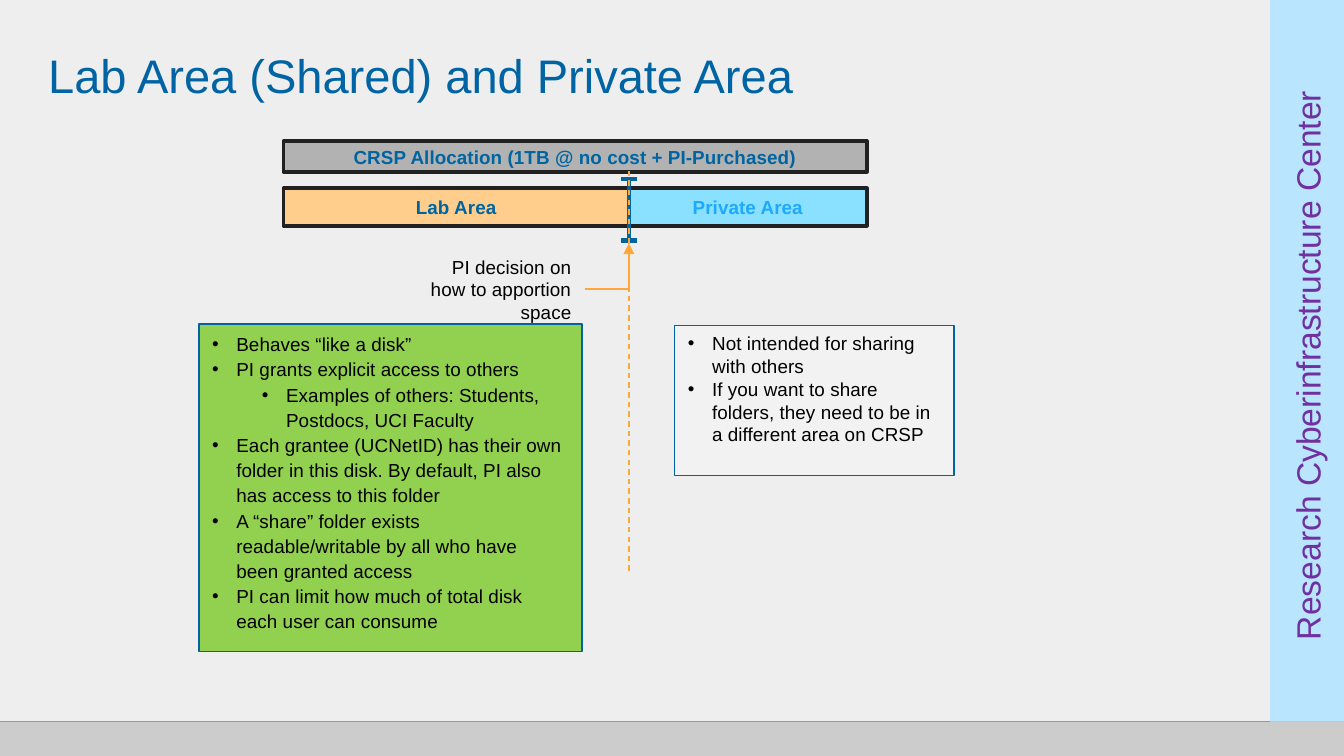
from lxml import etree
from pptx import Presentation
from pptx.dml.color import RGBColor
from pptx.enum.dml import MSO_LINE
from pptx.enum.shapes import MSO_CONNECTOR, MSO_SHAPE
from pptx.enum.text import MSO_ANCHOR, PP_ALIGN
from pptx.oxml.ns import qn
from pptx.util import Inches, Pt

RECT = MSO_SHAPE.RECTANGLE
STRAIGHT, ELBOW = MSO_CONNECTOR.STRAIGHT, MSO_CONNECTOR.ELBOW
LEFT, CENTER, RIGHT = PP_ALIGN.LEFT, PP_ALIGN.CENTER, PP_ALIGN.RIGHT
TOP, MIDDLE = MSO_ANCHOR.TOP, MSO_ANCHOR.MIDDLE
DASH = MSO_LINE.DASH

WIDTH = 10
HEIGHT = WIDTH * 9 / 16
NAVY, AMBER, INK, BLACK = "0064A1", "FEA83A", "212121", "000000"
BODY_SIZE = 10.13

LAB_POINTS = [
    (0, "Behaves “like a disk”"),
    (0, "PI grants explicit access to others"),
    (1, "Examples of others: Students, Postdocs, UCI Faculty"),
    (0, "Each grantee (UCNetID) has their own folder in this disk. "
        "By default, PI also has access to this folder"),
    (0, "A “share” folder exists readable/writable by all who have been granted access"),
    (0, "PI can limit how much of total disk each user can consume"),
]
PRIVATE_POINTS = [
    (0, "Not intended for sharing with others"),
    (0, "If you want to share folders, they need to be in a different area on CRSP"),
]


def color(value):
    return RGBColor.from_string(value)


def set_font(paragraph, **formats):
    values = {"name": "Arial", "size": Pt(formats.pop("size", BODY_SIZE)), **formats}
    paragraph.font.color.rgb = color(values.pop("hue", BLACK))
    for key, value in values.items():
        setattr(paragraph.font, key, value)


def add_panel(slide, box, fill, line=None, width=0.75):
    panel = slide.shapes.add_shape(RECT, *map(Inches, box))
    panel.shadow.inherit = False
    panel.fill.solid()
    panel.fill.fore_color.rgb = color(fill)
    if line:
        panel.line.color.rgb = color(line)
        panel.line.width = Pt(width)
    else:
        panel.line.fill.background()
    return panel


def write(shape, text, align=CENTER, anchor=MIDDLE, **formats):
    frame = shape.text_frame
    frame.word_wrap = True
    frame.vertical_anchor = anchor
    paragraph = frame.paragraphs[0]
    paragraph.alignment = align
    set_font(paragraph, **formats)
    paragraph.add_run().text = text


def add_label(slide, box, text, **formats):
    write(slide.shapes.add_textbox(*map(Inches, box)), text, **formats)


def add_line(slide, start, end, hue, width=0.75, kind=STRAIGHT):
    line = slide.shapes.add_connector(kind, *map(Inches, (*start, *end)))
    line.line.color.rgb = color(hue)
    line.line.width = Pt(width)
    etree.SubElement(line._element.spPr, qn("a:effectLst"))
    return line


def add_frame(slide):
    """Footer strip and the vertical banner on the right edge."""
    footer_top, banner_left = 5.37, 9.45
    add_panel(slide, (0, footer_top, WIDTH, HEIGHT - footer_top), "CCCCCC")
    add_line(slide, (0, footer_top), (WIDTH, footer_top), "999999")
    banner = add_panel(slide, (banner_left, 0, WIDTH - banner_left, footer_top), "B9E5FF")
    write(banner, "Research Cyberinfrastructure Center ", size=18, hue="7030A0")
    banner.text_frame._txBody.bodyPr.set("vert", "vert270")


def add_allocation(slide, left, top, width, split):
    """Total bar above the lab and private bars, which meet at x = split."""
    lower, right = top + 0.35, left + width
    bars = [
        ((left, top, width, 0.23), "B2B2B2", NAVY,
         "CRSP Allocation (1TB @ no cost + PI-Purchased)"),
        ((left, lower, split - left, 0.28), "FFCD8C", NAVY, "Lab Area"),
        ((split, lower, right - split, 0.28), "89E1FF", "1CA9FF", "Private Area"),
    ]
    for box, fill, hue, text in bars:
        write(add_panel(slide, box, fill, INK, 2), text, hue=hue, bold=True)


def add_divider(slide, x, top, bottom):
    """Slider mark shaped like a capital I."""
    add_line(slide, (x, top), (x, bottom), NAVY, 2.25)
    for y in (bottom, top):
        add_line(slide, (x - 0.06, y), (x + 0.06, y), NAVY, 2.25)


def add_decision(slide, left, top, split):
    width = 1.32
    add_label(slide, (left, top, width, 0.61), "PI decision on how to apportion space",
              align=RIGHT, anchor=TOP)
    arrow = add_line(slide, (left + width, top + 0.3), (split, top - 0.04), AMBER, kind=ELBOW)
    arrow._element.spPr.find(qn("a:prstGeom")).set("prst", "bentConnector2")
    etree.SubElement(arrow.line._get_or_add_ln(), qn("a:tailEnd"), type="triangle")


def add_points(slide, box, fill, points, spacing=None, margin_right=0.1):
    panel = add_panel(slide, box, fill, NAVY)
    frame = panel.text_frame
    frame.word_wrap = True
    frame.vertical_anchor = TOP
    frame.margin_right = Inches(margin_right)
    for index, (level, text) in enumerate(points):
        paragraph = frame.paragraphs[0] if index == 0 else frame.add_paragraph()
        paragraph.alignment = LEFT
        paragraph.level = level
        if spacing:
            paragraph.line_spacing = Pt(spacing)
        props = paragraph._p.get_or_add_pPr()
        props.set("marL", str(Inches(0.18 + 0.37 * level)))
        props.set("indent", str(Inches(-0.18)))
        bullet_color = etree.SubElement(props, qn("a:buClr"))
        etree.SubElement(bullet_color, qn("a:srgbClr"), val=BLACK)
        etree.SubElement(props, qn("a:buFont"), typeface="Arial")
        etree.SubElement(props, qn("a:buChar"), char="•")
        set_font(paragraph)
        paragraph.add_run().text = text


def main():
    deck = Presentation()
    deck.slide_width, deck.slide_height = Inches(WIDTH), Inches(HEIGHT)
    slide = deck.slides.add_slide(deck.slide_layouts[6])
    slide.background.fill.solid()
    slide.background.fill.fore_color.rgb = color("EEEEEE")

    split = 4.68
    add_frame(slide)
    add_allocation(slide, 2.11, 1.05, 4.34, split)
    add_divider(slide, split, 1.33, 1.79)
    add_decision(slide, 3.03, 1.85, split)
    add_points(slide, (5.02, 2.42, 2.08, 1.12), "F2F2F2", PRIVATE_POINTS)
    add_line(slide, (split, 1.27), (split, 4.27), AMBER).line.dash_style = DASH
    add_points(slide, (1.48, 2.41, 2.85, 2.44), "92D050", LAB_POINTS,
               spacing=13.5, margin_right=0.13)
    add_label(slide, (0.26, 0.34, 6.47, 0.43), "Lab Area (Shared) and Private Area",
              align=LEFT, size=25.2, hue="0064A4")
    deck.save("out.pptx")


if __name__ == "__main__":
    main()
